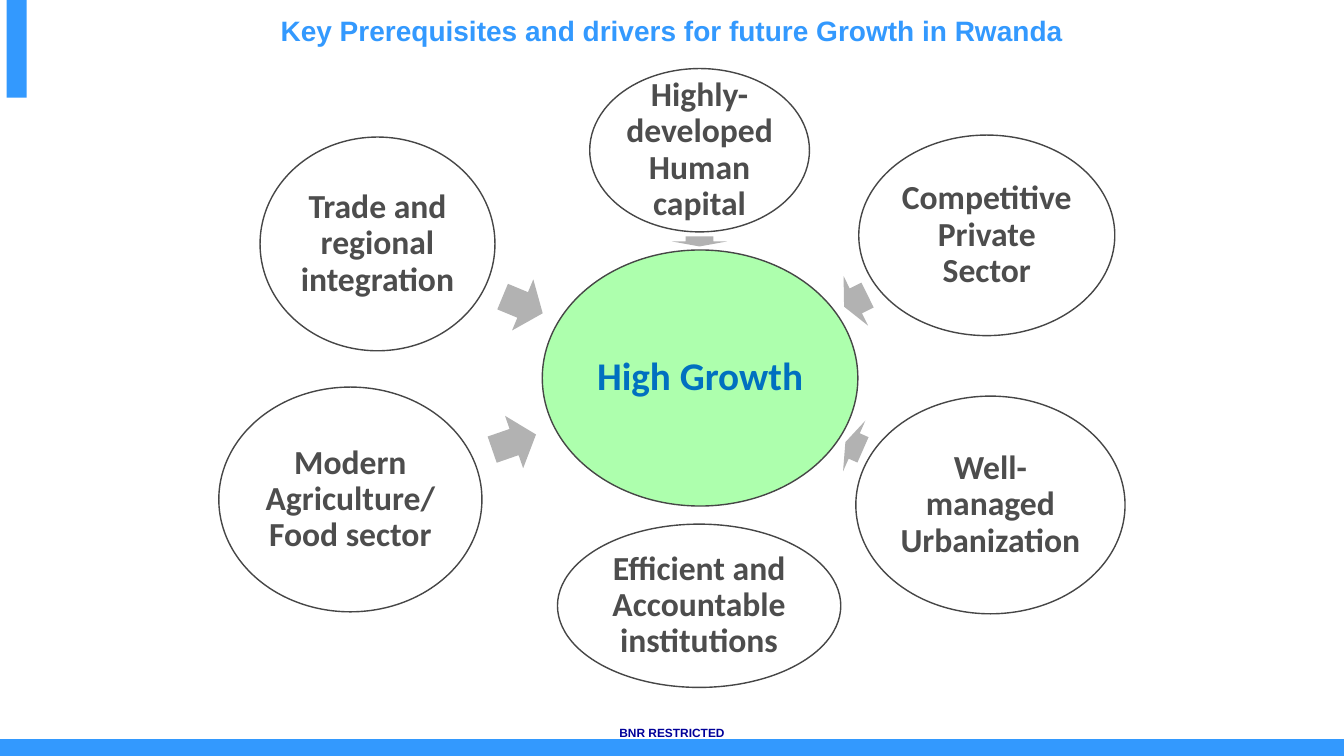
import pptx
import pptx.dml.color
import pptx.enum.shapes
import pptx.enum.text
import pptx.util

SHAPE = pptx.enum.shapes.MSO_SHAPE
MIDDLE = pptx.enum.text.MSO_ANCHOR.MIDDLE
CENTER = pptx.enum.text.PP_ALIGN.CENTER
WIDE, HIGH = 13.33, 7.5
COLORS = {
    "brand": "3399FE", "navy": "000099", "hub": "ADFFAD", "white": "FFFFFF",
    "edge": "464646", "arrow": "B2B2B2", "blue": "0070C0", "gray": "4D4D4D",
}
HUB = (40.35, 33.07, 23.48, 33.87)
DRIVERS = [
    ("Highly-developed Human capital", (43.88, 9.07, 16.35, 21.6)),
    ("Competitive Private Sector", (63.9, 17.87, 19.05, 26.53)),
    ("Well-managed Urbanization", (63.68, 52.4, 20.03, 28.8)),
    ("Efficient and Accountable institutions", (41.48, 69.33, 21.08, 21.6)),
    ("Modern Agriculture/Food sector", (16.28, 51.2, 19.58, 29.73)),
    ("Trade and regional integration", (19.35, 18.13, 17.48, 28.27)),
]
ARROWS = [
    (52.05, 31.93, 0.75, 270),
    (63.68, 39.8, 1.95, 333.7),
    (63.56, 59, 1.43, 23.7),
    (38.25, 58.47, 3.45, 160.9),
    (38.89, 40.33, 3.23, 202.6),
]
ARROW_HIGH = 7.33


def tint(name):
    """Return the named colour."""
    return pptx.dml.color.RGBColor.from_string(COLORS[name])


def scale(box):
    """Turn percent shares of the slide into lengths."""
    sizes = (WIDE, HIGH, WIDE, HIGH)
    return [pptx.util.Inches(part * size / 100) for part, size in zip(box, sizes)]


def draw(slide, kind, box, fill, edge=None):
    """Add a filled shape, outlined if an edge colour is given."""
    shape = slide.shapes.add_shape(kind, *scale(box))
    shape.shadow.inherit = False
    shape.fill.solid()
    shape.fill.fore_color.rgb = tint(fill)
    if edge:
        shape.line.color.rgb = tint(edge)
        shape.line.width = pptx.util.Pt(1)
    else:
        shape.line.fill.background()
    return shape


def write(shape, text, size, color, face="Calibri", space=1.0, inset=0.05):
    """Put one centred bold run in a shape."""
    frame = shape.text_frame
    frame.word_wrap = True
    frame.auto_size = pptx.enum.text.MSO_AUTO_SIZE.NONE
    frame.vertical_anchor = MIDDLE
    frame.margin_left = frame.margin_right = pptx.util.Inches(inset)
    frame.margin_top = frame.margin_bottom = pptx.util.Inches(inset)
    line = frame.paragraphs[0]
    line.alignment = CENTER
    line.line_spacing = space
    run = line.add_run()
    run.text = text
    run.font.name = face
    run.font.size = pptx.util.Pt(size)
    run.font.bold = True
    run.font.color.rgb = tint(color)


def add_frame(slide):
    """Draw the side bar, bottom bar and footer label."""
    draw(slide, SHAPE.RECTANGLE, (0, 97.87, 100, 2.13), "brand", "brand")
    draw(slide, SHAPE.RECTANGLE, (0.49, 0, 1.5, 12.93), "brand")
    label = slide.shapes.add_textbox(*scale((0, 95.33, 100, 3.2)))
    write(label, "BNR RESTRICTED", 8.5, "navy", "Arial")


def add_title(slide, box):
    """Place and format the title."""
    title = slide.shapes.title
    title.left, title.top, title.width, title.height = scale(box)
    text = "Key Prerequisites and drivers for future Growth in Rwanda"
    write(title, text, 20, "brand", "Arial")


def add_oval(slide, text, box, fill, size, color):
    """Draw an outlined oval with its label."""
    oval = draw(slide, SHAPE.OVAL, box, fill, "edge")
    write(oval, text, size, color, space=0.9, inset=0.03)


def add_arrow(slide, mid, level, length, angle):
    """Draw a turned arrow about its centre."""
    box = (mid - length / 2, level - ARROW_HIGH / 2, length, ARROW_HIGH)
    draw(slide, SHAPE.LEFT_ARROW, box, "arrow").rotation = angle


def main():
    """Build and save the slide."""
    deck = pptx.Presentation()
    deck.slide_width = pptx.util.Inches(WIDE)
    deck.slide_height = pptx.util.Inches(HIGH)
    slide = deck.slides.add_slide(deck.slide_layouts[5])
    add_frame(slide)
    add_title(slide, (9.38, 1.07, 81.23, 5.87))
    add_oval(slide, "High Growth", HUB, "hub", 28, "blue")
    for arrow in ARROWS:
        add_arrow(slide, *arrow)
    for text, box in DRIVERS:
        add_oval(slide, text, box, "white", 24, "gray")
    deck.save("out.pptx")


if __name__ == "__main__":
    main()
